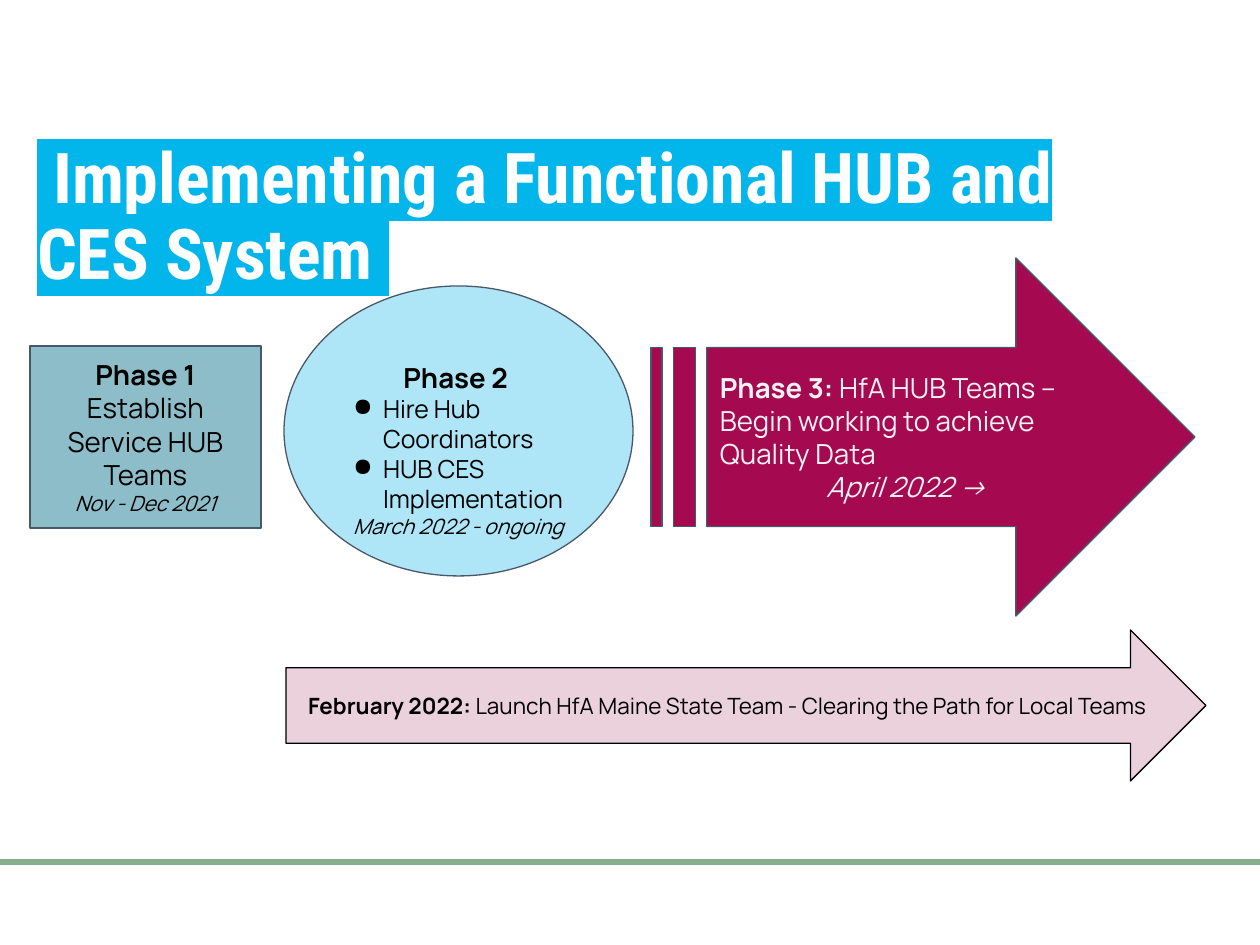
from lxml.etree import SubElement
from pptx import Presentation
from pptx.dml.color import RGBColor
from pptx.enum.shapes import MSO_CONNECTOR, MSO_SHAPE
from pptx.enum.text import MSO_ANCHOR, MSO_AUTO_SIZE, PP_ALIGN
from pptx.oxml.ns import qn
from pptx.util import Emu, Pt

TITLE = " Implementing a Functional HUB and CES System "
TITLE_BOX = (24, 130, 1149, 87)
TITLE_BLUE = "02B5EA"
RULE = {"y": 862, "color": "8AAF8E", "width": 3}
BODY_FONT = "Manrope"

STEPS = [
    {"form": MSO_SHAPE.RECTANGLE, "box": (30, 346, 231, 182), "fill": "8CBDC8",
     "line": "495869", "ink": "000000", "insets": (13, 13, 13, 13),
     "paragraphs": [
         ("center", [("Phase 1", 15.8, "b")]),
         ("center", [("Establish Service HUB Teams", 15.8, "")]),
         ("center", [("Nov - Dec 2021", 12, "i")])]},
    {"form": MSO_SHAPE.OVAL, "box": (284, 286, 349, 290), "fill": "12B5EA", "alpha": 34,
     "line": "495869", "ink": "000000", "insets": (13, 50, 13, 13),
     "paragraphs": [
         ("center", [("Phase 2 ", 15.8, "b")]),
         ("bullet", [("Hire Hub Coordinators", 14.2, "")]),
         ("bullet", [("HUB CES Implementation", 14.2, "")]),
         ("center", [("March 2022 - ongoing", 12, "i")])]},
    {"form": MSO_SHAPE.STRIPED_RIGHT_ARROW, "box": (651, 258, 544, 358), "fill": "A50A51",
     "line": "495869", "ink": "F2F2F2", "insets": (13, 13, 13, 13),
     "paragraphs": [
         ("left", [("Phase 3: ", 15.8, "b"),
                   ("HfA HUB Teams – Begin working to achieve Quality Data", 15.8, "")]),
         ("center", [("April 2022 ->", 15.8, "i")])]},
    {"form": MSO_SHAPE.RIGHT_ARROW, "box": (286, 630, 920, 151), "fill": "EAD1DC",
     "line": "000000", "ink": "000000", "insets": (9, 9, 9, 9),
     "paragraphs": [
         ("center", [("February 2022: ", 12.8, "b"),
                     ("Launch HfA Maine State Team - Clearing the Path for Local Teams",
                      12.8, "")])]},
]


def px(length):
    """Turn pixels into EMU."""
    return Emu(round(length * 914400 / 126))


def rgb(color):
    """Turn a hex string into a colour."""
    return RGBColor.from_string(color)


def set_frame(frame, insets, anchor):
    """Set the wrapping, anchor and insets of a text frame."""
    frame.word_wrap = True
    frame.auto_size = MSO_AUTO_SIZE.NONE
    frame.vertical_anchor = anchor
    (frame.margin_left, frame.margin_top,
     frame.margin_right, frame.margin_bottom) = map(px, insets)


def set_font(run, name, size, color, bold, italic=False):
    """Format a run."""
    font = run.font
    font.name, font.size, font.bold, font.italic = name, Pt(size), bold, italic
    font.color.rgb = rgb(color)


def add_bullet(paragraph, color):
    """Give a paragraph a hanging round bullet."""
    properties = paragraph._p.get_or_add_pPr()
    properties.set("marL", str(px(35)))
    properties.set("indent", str(px(-30)))
    bullet_color = SubElement(properties, qn("a:buClr"))
    SubElement(bullet_color, qn("a:srgbClr"), val=color)
    SubElement(properties, qn("a:buChar"), char="●")


def add_title(slide):
    """Fill the title placeholder with highlighted text."""
    title = slide.shapes.title
    title.left, title.top, title.width, title.height = map(px, TITLE_BOX)
    frame = title.text_frame
    frame.text = TITLE
    set_frame(frame, (13, 13, 13, 13), MSO_ANCHOR.TOP)
    heading = frame.paragraphs[0]
    heading.alignment = PP_ALIGN.LEFT
    heading.line_spacing = 0.9
    heading.space_before = Pt(0)
    run = heading.runs[0]
    set_font(run, "Roboto Condensed", 40, "FFFFFF", True)
    properties = run.font._element
    highlight = SubElement(properties, qn("a:highlight"))
    SubElement(highlight, qn("a:srgbClr"), val=TITLE_BLUE)
    properties.find(qn("a:solidFill")).addnext(highlight)


def add_rule(slide):
    """Draw the line across the foot of the slide."""
    y = px(RULE["y"])
    rule = slide.shapes.add_connector(MSO_CONNECTOR.STRAIGHT, 0, y, px(1260), y)
    rule.line.color.rgb = rgb(RULE["color"])
    rule.line.width = Pt(RULE["width"])
    SubElement(rule._element.spPr, qn("a:effectLst"))


def add_step(slide, step):
    """Draw one step of the timeline with its text."""
    shape = slide.shapes.add_shape(step["form"], *map(px, step["box"]))
    shape.shadow.inherit = False
    shape.fill.solid()
    shape.fill.fore_color.rgb = rgb(step["fill"])
    if "alpha" in step:
        fill_color = shape._element.spPr.find(qn("a:solidFill"))[0]
        SubElement(fill_color, qn("a:alpha"), val=str(step["alpha"] * 1000))
    shape.line.color.rgb = rgb(step["line"])
    shape.line.width = Pt(0.75)
    frame = shape.text_frame
    set_frame(frame, step["insets"], MSO_ANCHOR.MIDDLE)
    for index, (layout, runs) in enumerate(step["paragraphs"]):
        paragraph = frame.add_paragraph() if index else frame.paragraphs[0]
        paragraph.alignment = PP_ALIGN.CENTER if layout == "center" else PP_ALIGN.LEFT
        if layout == "bullet":
            add_bullet(paragraph, step["ink"])
        for words, size, style in runs:
            run = paragraph.add_run()
            run.text = words
            set_font(run, BODY_FONT, size, step["ink"], style == "b", style == "i")


def main():
    """Build and save the slide."""
    deck = Presentation()
    deck.slide_width, deck.slide_height = px(1260), px(945)
    slide = deck.slides.add_slide(deck.slide_layouts[5])
    add_rule(slide)
    add_title(slide)
    for step in STEPS:
        add_step(slide, step)
    deck.save("out.pptx")


if __name__ == "__main__":
    main()
